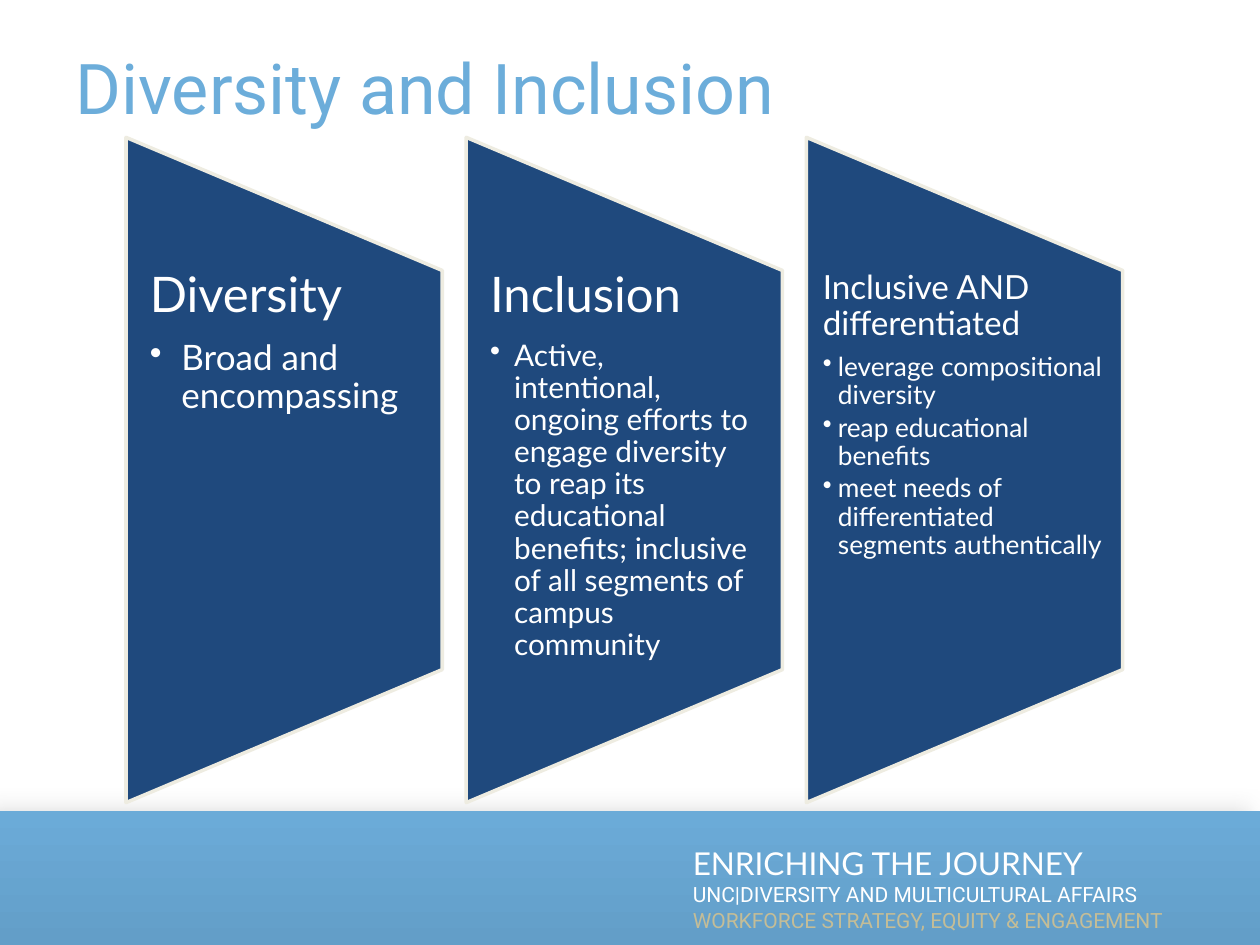
from lxml import etree
from pptx import Presentation
from pptx.dml.color import RGBColor
from pptx.enum.shapes import MSO_SHAPE
from pptx.enum.text import MSO_ANCHOR, MSO_AUTO_SIZE, PP_ALIGN
from pptx.oxml.ns import qn
from pptx.util import Inches, Pt

RECTANGLE = MSO_SHAPE.RECTANGLE
TRAPEZOID = MSO_SHAPE.FLOWCHART_MANUAL_OPERATION
TOP = MSO_ANCHOR.TOP
LEFT = PP_ALIGN.LEFT
NO_AUTOFIT = MSO_AUTO_SIZE.NONE

COLORS = {
    "title": "6CADDA",
    "panel": "1F497D",
    "panel_line": "EEECE1",
    "band_top": "6BABD8",
    "band_bottom": "639EC8",
    "shadow": "BFBFBF",
    "white": "FFFFFF",
    "sand": "C4BD97",
}

TITLE = "Diversity and Inclusion"
FOOTER = [
    ("ENRICHING THE JOURNEY", 18, "Lato", "white"),
    ("UNC|DIVERSITY AND MULTICULTURAL AFFAIRS", 12, "Roboto", "white"),
    ("WORKFORCE STRATEGY, EQUITY & ENGAGEMENT", 12, "Roboto", "sand"),
]
PANELS = [
    {"heading": "Diversity", "heading_size": 28, "point_size": 20,
     "indent": 0.25, "inset": 0.19,
     "points": ["Broad and encompassing"]},
    {"heading": "Inclusion", "heading_size": 28, "point_size": 17,
     "indent": 0.19, "inset": 0.19,
     "points": ["Active, intentional, ongoing efforts to engage diversity "
                "to reap its educational benefits; inclusive of all "
                "segments of campus community"]},
    {"heading": "Inclusive AND differentiated", "heading_size": 19,
     "point_size": 15, "indent": 0.12, "inset": 0.13,
     "points": ["leverage compositional diversity",
                "reap educational benefits",
                "meet needs of differentiated segments authentically"]},
]

SLIDE_W, SLIDE_H = 10, 7.5
BAND_TOP = 6.44
PANEL_LEFT, PANEL_TOP = 1, 1.09
PANEL_W, PANEL_H = 2.51, 5.28
PANEL_STEP = 2.7


def rgb(name):
    return RGBColor.from_string(COLORS[name])


def box(left, top, width, height):
    return [Inches(value) for value in (left, top, width, height)]


def add_text(paragraph, text, size, font, color):
    run = paragraph.add_run()
    run.text = text
    run.font.size = Pt(size)
    run.font.name = font
    run.font.color.rgb = rgb(color)


def paragraphs(frame, count):
    return [frame.paragraphs[0]] + [frame.add_paragraph() for _ in range(count - 1)]


def add_bullet(paragraph, indent):
    properties = paragraph._p.get_or_add_pPr()
    properties.set("marL", str(Inches(indent)))
    properties.set("indent", str(-Inches(indent)))
    etree.SubElement(properties, qn("a:buChar"), char="•")


def add_shadow(shape):
    shape.shadow.inherit = False
    effects = shape._element.spPr.find(qn("a:effectLst"))
    shadow = etree.SubElement(
        effects, qn("a:outerShdw"), blurRad=str(Pt(10.8)), dist=str(Pt(7)),
        dir=str(197 * 60000), algn="tl", rotWithShape="0")
    color = etree.SubElement(shadow, qn("a:srgbClr"), val=COLORS["shadow"])
    etree.SubElement(color, qn("a:alpha"), val="43000")


def add_footer(slide):
    band = slide.shapes.add_shape(
        RECTANGLE, *box(0, BAND_TOP, SLIDE_W, SLIDE_H - BAND_TOP))
    band.fill.gradient()
    band.fill.gradient_angle = 270
    for stop, color, position in zip(
            band.fill.gradient_stops, ("band_top", "band_bottom"), (0, 1)):
        stop.color.rgb = rgb(color)
        stop.position = position
    band.line.fill.background()
    add_shadow(band)

    frame = slide.shapes.add_textbox(*box(5.4, 6.65, 4.1, 1.01)).text_frame
    frame.word_wrap = True
    for paragraph, line in zip(paragraphs(frame, len(FOOTER)), FOOTER):
        add_text(paragraph, *line)


def add_title(slide):
    title = slide.shapes.title
    title.left, title.top, title.width, title.height = box(0.5, 0.3, 9, 1.25)
    frame = title.text_frame
    frame.auto_size = NO_AUTOFIT
    frame.vertical_anchor = TOP
    heading = frame.paragraphs[0]
    heading.alignment = LEFT
    add_text(heading, TITLE, 40, "Roboto", "title")


def add_panel(slide, column, panel):
    left = PANEL_LEFT + column * PANEL_STEP
    turn = (PANEL_H - PANEL_W) / 2
    trapezoid = slide.shapes.add_shape(
        TRAPEZOID, *box(left - turn, PANEL_TOP + turn, PANEL_H, PANEL_W))
    trapezoid.rotation = 270
    trapezoid.shadow.inherit = False
    trapezoid.fill.solid()
    trapezoid.fill.fore_color.rgb = rgb("panel")
    trapezoid.line.color.rgb = rgb("panel_line")
    trapezoid.line.width = Pt(2)

    frame = slide.shapes.add_textbox(
        *box(left, PANEL_TOP + PANEL_H / 5, PANEL_W, PANEL_H * 3 / 5)).text_frame
    frame.word_wrap = True
    frame.margin_left = frame.margin_right = Inches(panel["inset"])
    frame.margin_top = frame.margin_bottom = 0
    heading, *points = paragraphs(frame, 1 + len(panel["points"]))
    heading.line_spacing = 0.9
    heading.space_after = Pt(0.35 * panel["heading_size"])
    add_text(heading, panel["heading"], panel["heading_size"], "Lato", "white")
    for point, text in zip(points, panel["points"]):
        point.level = 1
        point.line_spacing = 0.9
        point.space_after = Pt(0.15 * panel["point_size"])
        add_bullet(point, panel["indent"])
        add_text(point, text, panel["point_size"], "Lato", "white")


def main():
    deck = Presentation()
    deck.slide_width, deck.slide_height = Inches(SLIDE_W), Inches(SLIDE_H)
    slide = deck.slides.add_slide(deck.slide_layouts.get_by_name("Title Only"))
    add_footer(slide)
    add_title(slide)
    for column, panel in enumerate(PANELS):
        add_panel(slide, column, panel)
    deck.save("out.pptx")


if __name__ == "__main__":
    main()
